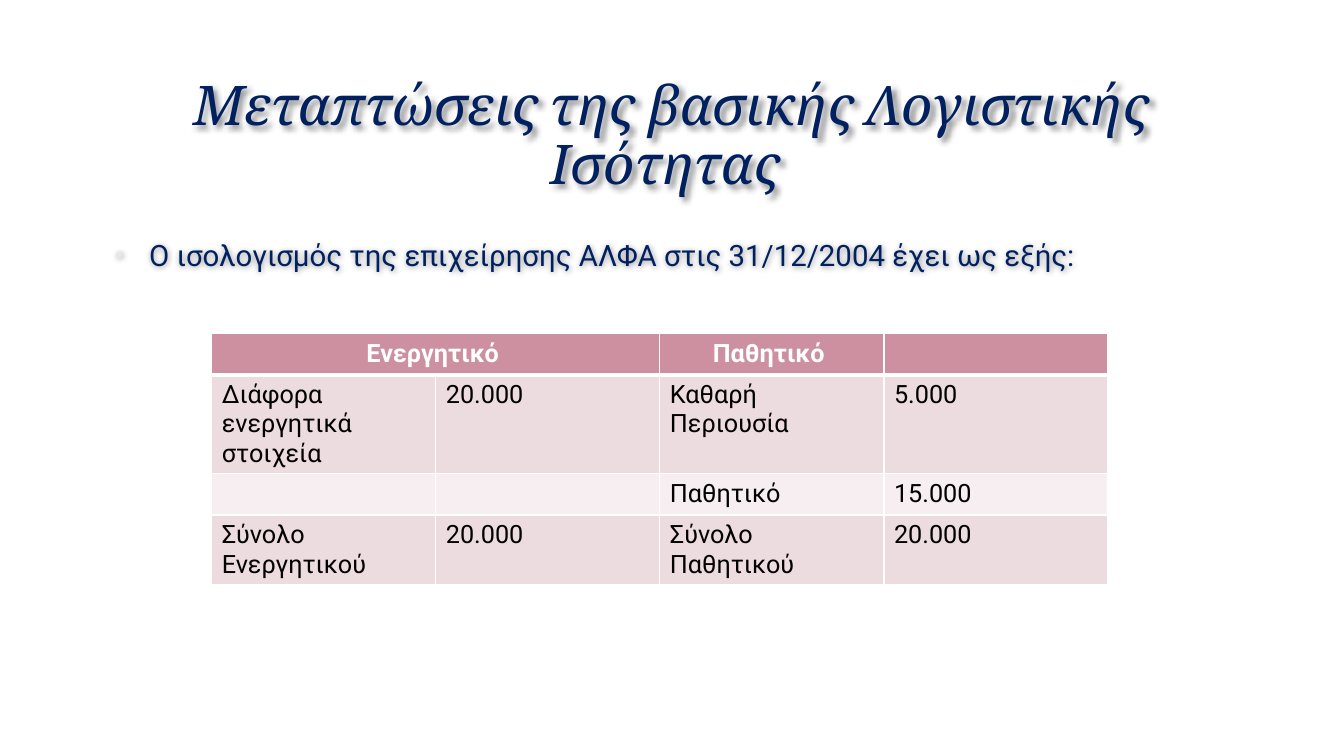
from dataclasses import dataclass

from lxml import etree
from pptx import Presentation
from pptx.dml.color import RGBColor
from pptx.enum.text import MSO_ANCHOR, MSO_AUTO_SIZE, PP_ALIGN
from pptx.util import Inches, Pt

CENTER, LEFT = PP_ALIGN.CENTER, PP_ALIGN.LEFT
MIDDLE, TOP = MSO_ANCHOR.MIDDLE, MSO_ANCHOR.TOP
NO_FIT = MSO_AUTO_SIZE.NONE
NS = "http://schemas.openxmlformats.org/drawingml/2006/main"


@dataclass(frozen=True)
class Theme:
    navy: str = "002060"
    black: str = "000000"
    white: str = "FFFFFF"
    edge: str = "404040"
    bullet: str = "E2E8E6"
    head: str = "CC90A0"
    bands: tuple = ("ECDBDF", "F6EEF0")
    serif: str = "Cambria"
    sans: str = "Roboto"
    title: float = 39
    body: float = 21
    cell: float = 18


@dataclass(frozen=True)
class Block:
    """Text in a placeholder; box is left, top, width, height in inches."""
    text: str
    box: tuple
    font: dict
    para: dict
    anchor: MSO_ANCHOR
    shift: float


THEME = Theme()
TITLE = Block(
    "Μεταπτώσεις της βασικής Λογιστικής Ισότητας ", (1, 0.67, 11.32, 1.38),
    {"name": THEME.serif, "size": Pt(THEME.title), "italic": True},
    {"alignment": CENTER, "line_spacing": 0.9}, MIDDLE, 3)
BODY = Block(
    "Ο ισολογισμός της επιχείρησης ΑΛΦΑ στις 31/12/2004 έχει ως εξής:",
    (1, 2.27, 11.32, 4.06),
    {"name": THEME.sans, "size": Pt(THEME.body)},
    {"alignment": LEFT, "line_spacing": 1.1,
     "space_before": Pt(4.2), "space_after": Pt(6)}, TOP, 1)
ROWS = (
    ("Ενεργητικό ", "", "Παθητικό ", ""),
    ("Διάφορα ενεργητικά στοιχεία", "20.000", "Καθαρή Περιουσία", "5.000"),
    ("", "", "Παθητικό", "15.000"),
    ("Σύνολο Ενεργητικού", "20.000", "Σύνολο Παθητικού", "20.000"),
)


def apply(item: object, values: dict) -> None:
    for name, value in values.items():
        setattr(item, name, value)


def node(body: str) -> etree._Element:
    """Parse one drawing element, given without its namespace."""
    tag, rest = body[1:].split(" ", 1)
    return etree.fromstring(f'<a:{tag} xmlns:a="{NS}" {rest}')


def place(shape, block: Block) -> None:
    names = ("left", "top", "width", "height")
    apply(shape, dict(zip(names, map(Inches, block.box))))
    frame = shape.text_frame
    apply(frame, {"word_wrap": True, "auto_size": NO_FIT,
                  "vertical_anchor": block.anchor})
    para = frame.paragraphs[0]
    apply(para, block.para)
    run = para.add_run()
    run.text = block.text
    apply(run.font, block.font)
    run.font.color.rgb = RGBColor.from_string(THEME.navy)
    # Faint letter outline and soft shadow
    run.font._element.insert(0, node(
        f'<ln w="{Pt(0.75)}"><a:solidFill><a:srgbClr val="{THEME.edge}">'
        '<a:alpha val="10000"/></a:srgbClr></a:solidFill></a:ln>'))
    shape._element.spPr.append(node(
        f'<effectLst ><a:outerShdw blurRad="{Pt(4)}" dist="{Pt(block.shift)}" '
        f'dir="2700000"><a:srgbClr val="{THEME.black}"><a:alpha val="45000"/>'
        '</a:srgbClr></a:outerShdw></a:effectLst>'))


def mark(para) -> None:
    """Give a paragraph its pale bullet and hanging indent."""
    props = para._p.get_or_add_pPr()
    props.set("marL", str(Inches(0.38)))
    props.set("indent", str(Inches(-0.33)))
    for part in (f'<buClr ><a:srgbClr val="{THEME.bullet}"/></a:buClr>',
                 '<buSzPct val="70000"/>', '<buFont typeface="Arial"/>',
                 '<buChar char="•"/>'):
        props.append(node(part))


def style(cell, text: str, row: int) -> None:
    head = row == 0
    fill = THEME.head if head else THEME.bands[(row - 1) % 2]
    cell.fill.solid()
    cell.fill.fore_color.rgb = RGBColor.from_string(fill)
    para = cell.text_frame.paragraphs[0]
    para.alignment = CENTER if head else LEFT
    if text:
        run = para.add_run()
        run.text = text
        apply(run.font, {"name": THEME.sans, "size": Pt(THEME.cell),
                         "bold": head})
        ink = THEME.white if head else THEME.black
        run.font.color.rgb = RGBColor.from_string(ink)
    # White rules, heavier around the header's lower edge
    wide = {"T": 3 if row == 1 else 1, "B": 3 if head else 1}
    for spot, side in enumerate("LRTB"):
        cell._tc.tcPr.insert(spot, node(
            f'<ln{side} w="{Pt(wide.get(side, 1))}"><a:solidFill>'
            f'<a:srgbClr val="{THEME.white}"/></a:solidFill></a:ln{side}>'))


def main() -> None:
    deck = Presentation()
    deck.slide_width, deck.slide_height = Inches(13.33), Inches(7.5)
    slide = deck.slides.add_slide(deck.slide_layouts[1])

    # Title and lead line
    body = slide.placeholders[1]
    place(body, BODY)
    mark(body.text_frame.paragraphs[0])
    place(slide.shapes.title, TITLE)

    # Balance sheet
    table = slide.shapes.add_table(
        len(ROWS), len(ROWS[0]), Inches(2.1), Inches(3.31),
        Inches(8.89), Inches(0.41 * len(ROWS))).table
    for row, texts in enumerate(ROWS):
        for col, text in enumerate(texts):
            style(table.cell(row, col), text, row)
    table.cell(0, 0).merge(table.cell(0, 1))

    deck.save("out.pptx")


if __name__ == "__main__":
    main()
